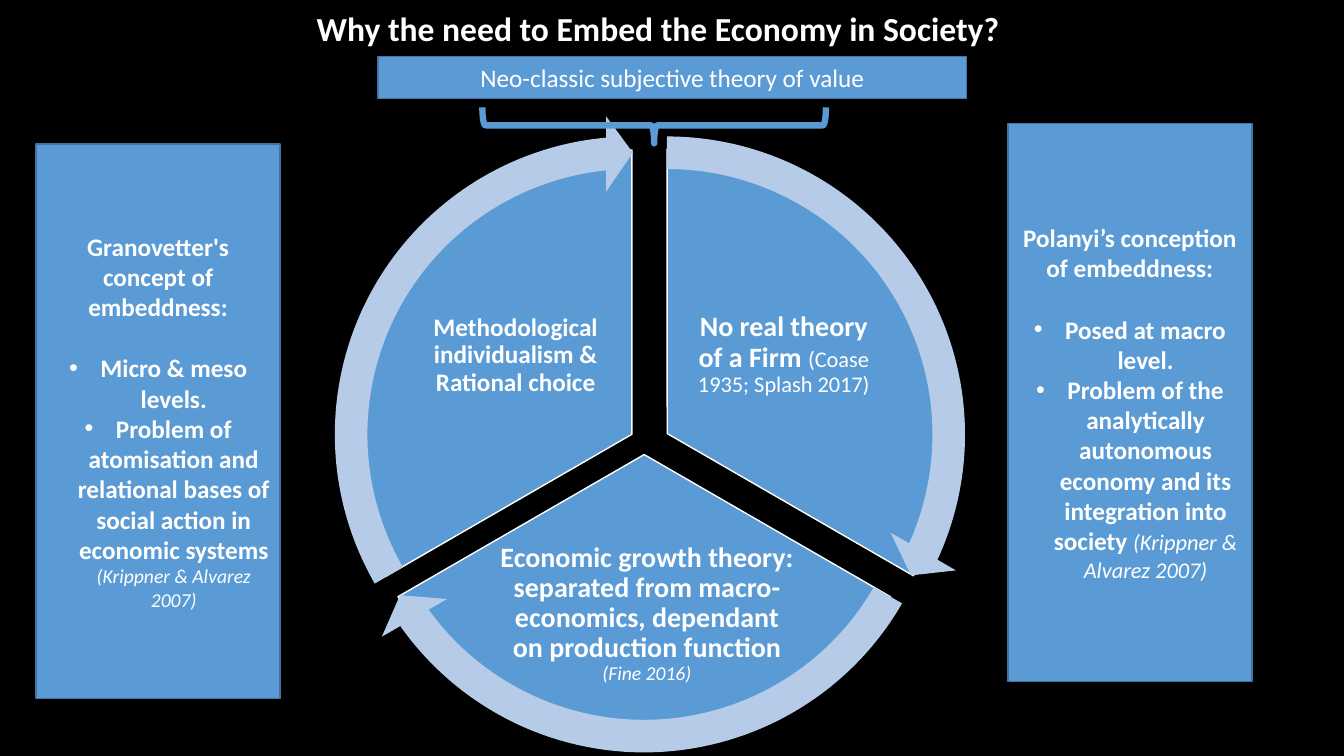
from lxml.etree import SubElement
from pptx import Presentation
from pptx.dml.color import RGBColor
from pptx.enum.shapes import MSO_SHAPE
from pptx.enum.text import MSO_ANCHOR, MSO_AUTO_SIZE, PP_ALIGN
from pptx.oxml.ns import qn
from pptx.util import Cm, Pt

BLACK = RGBColor(0x00, 0x00, 0x00)
WHITE = RGBColor(0xFF, 0xFF, 0xFF)
BLUE = RGBColor(0x5B, 0x9B, 0xD5)
DARK_BLUE = RGBColor(0x43, 0x73, 0x9E)
PALE_BLUE = RGBColor(0xB5, 0xCB, 0xE7)


def write(tf, paragraphs, size, bold=True, align=PP_ALIGN.CENTER, spacing=1.0,
          margin=None, bulleted=False):
    """Fill tf; each paragraph is (text, citation, citation size, citation italic).

    With bulleted, every paragraph after the first one gets a bullet.
    """
    tf.word_wrap = True
    tf.auto_size = MSO_AUTO_SIZE.NONE
    tf.vertical_anchor = MSO_ANCHOR.MIDDLE
    if margin is not None:
        tf.margin_left = tf.margin_right = tf.margin_top = tf.margin_bottom = margin
    for i, (text, citation, citation_size, italic) in enumerate(paragraphs):
        p = tf.add_paragraph() if i else tf.paragraphs[0]
        p.alignment = align
        p.line_spacing = spacing
        for words, pt, is_bold, is_italic in ((text, size, bold, False),
                                              (citation, citation_size, False, italic)):
            if words:
                r = p.add_run()
                r.text = words
                r.font.name = "Calibri"
                r.font.size = Pt(pt)
                r.font.bold = is_bold
                r.font.italic = is_italic
                r.font.color.rgb = WHITE
        if bulleted and i == 0:
            p.space_after = Pt(22)
        elif bulleted:
            pPr = p._p.get_or_add_pPr()
            pPr.set("marL", str(Cm(0.79)))
            pPr.set("indent", str(-Cm(0.79)))
            SubElement(pPr, qn("a:buFont"), typeface="Arial")
            SubElement(pPr, qn("a:buChar"), char="•")


def add_shape(kind, box, fill=None, line=None, width=1, adjustments=()):
    sp = s.shapes.add_shape(kind, *map(Cm, box))
    sp.shadow.inherit = False
    for i, value in enumerate(adjustments):
        sp.adjustments[i] = value
    if fill is None:
        sp.fill.background()
    else:
        sp.fill.solid()
        sp.fill.fore_color.rgb = fill
    if line is None:
        sp.line.fill.background()
    else:
        sp.line.color.rgb = line
        sp.line.width = Pt(width)
    return sp


prs = Presentation()
prs.slide_width, prs.slide_height = Cm(33.87), Cm(19.05)
s = prs.slides.add_slide(prs.slide_layouts[5])
s.background.fill.solid()
s.background.fill.fore_color.rgb = BLACK

title = s.shapes.title
title.left, title.top, title.width, title.height = map(Cm, (4.65, -1.07, 29.21, 3.68))
write(title.text_frame, [("Why the need to Embed the Economy in Society?", "", 0, False)],
      24, align=PP_ALIGN.LEFT, spacing=0.9)
title.text_frame.margin_left = Cm(3.33)

# Three sectors of the cycle: corner, start and end angle, label box, label
PIE_SIZE = 14.33
sectors = [
    ((9.65, 3.76), (162, 18), (17.2, 6.81, 5.11, 4.27), 20,
     ("No real theory of a Firm ", "(Coase 1935; Splash 2017)", 16, False)),
    ((9.07, 4.29), (18, 90), (12.47, 13.59, 7.67, 3.76), 20,
     ("Economic growth theory: separated from macro-economics, "
      "dependant on production function ", "(Fine 2016)", 14, True)),
    ((8.76, 3.78), (90, 162), (10.44, 6.83, 5.11, 4.27), 18,
     ("Methodological individualism & Rational choice", "", 0, False)),
]
for corner, angles, label_box, size, label in sectors:
    add_shape(MSO_SHAPE.PIE, (*corner, PIE_SIZE, PIE_SIZE), BLUE, WHITE, adjustments=angles)
    tb = s.shapes.add_textbox(*map(Cm, label_box))
    write(tb.text_frame, [label], size, spacing=0.9, margin=Cm(0.08))

# Arrows around the sectors: corner, end and start angle
ARROW_SIZE = 16.1
arrows = [
    ((8.76, 2.9), 14.725, 161.994),
    ((8.18, 3.4), 86.72, 18.005),
    ((7.9, 2.9), 158.73, 90),
]
for corner, end, start in arrows:
    add_shape(MSO_SHAPE.CIRCULAR_ARROW, (*corner, ARROW_SIZE, ARROW_SIZE), PALE_BLUE,
              adjustments=(0.051, 3.275, end, start, 0.059))

panels = [
    ((0.91, 3.63, 6.15, 13.97), [
        ("Granovetter's concept of embeddness:", "", 0, False),
        ("Micro & meso levels.", "", 0, False),
        ("Problem of atomisation and relational bases of social action in economic systems ",
         "(Krippner & Alvarez 2007)", 14, True)]),
    ((25.4, 3.12, 6.15, 14.05), [
        ("Polanyi’s conception of embeddness:", "", 0, False),
        ("Posed at macro level.", "", 0, False),
        ("Problem of the analytically autonomous economy and its integration into society ",
         "(Krippner & Alvarez 2007)", 16, True)]),
]
for box, paragraphs in panels:
    panel = add_shape(MSO_SHAPE.RECTANGLE, box, BLUE, DARK_BLUE)
    write(panel.text_frame, paragraphs, 18, bulleted=True)

banner = add_shape(MSO_SHAPE.RECTANGLE, (9.53, 1.42, 14.83, 1.07), BLUE, DARK_BLUE)
write(banner.text_frame, [("Neo-classic subjective theory of value", "", 0, False)],
      18, bold=False)

brace = add_shape(MSO_SHAPE.RIGHT_BRACE, (16.03, -1.17, 0.91, 8.66), line=BLUE, width=4.5)
brace.rotation = 90

prs.save("out.pptx")
